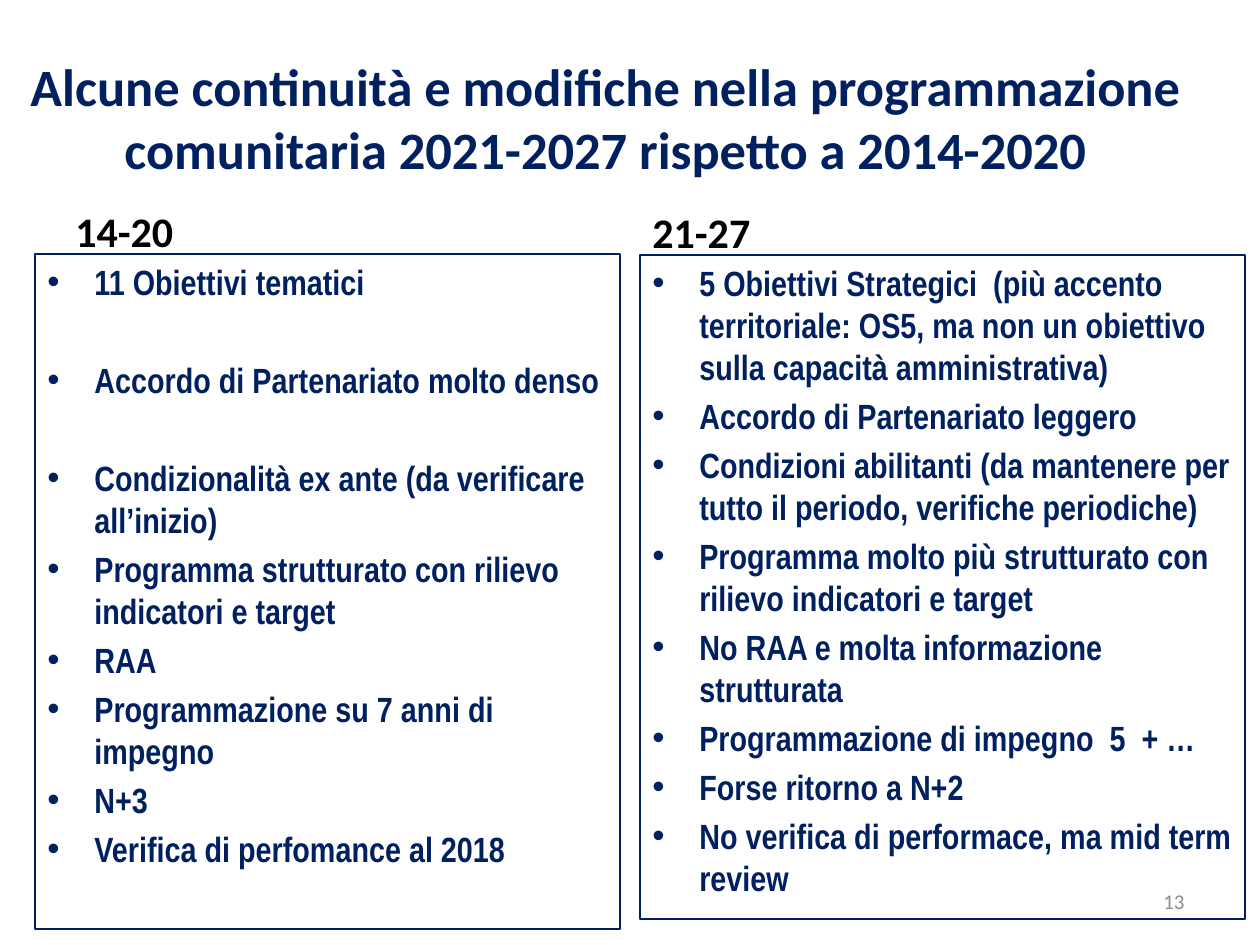
from pptx import Presentation
from pptx.dml.color import RGBColor
from pptx.enum.shapes import MSO_SHAPE
from pptx.enum.text import MSO_ANCHOR, PP_ALIGN
from pptx.oxml.xmlchemy import OxmlElement
from pptx.util import Pt

EMU_PER_PX = 914400 / 126
COLORS = {"navy": "002060", "black": "000000", "gray": "8C8C8C"}
BULLET_INDENT = 47
PARAGRAPH_GAP = 4
WIDE_GAP = 32

TITLE = ("Alcune continuità e modifiche nella programmazione "
         "comunitaria 2021-2027 rispetto a 2014-2020")
PERIOD_14_20 = [
    ("11 Obiettivi tematici", PARAGRAPH_GAP),
    ("Accordo di Partenariato molto denso", WIDE_GAP),
    ("Condizionalità ex ante (da verificare all’inizio)", WIDE_GAP),
    ("Programma strutturato con rilievo indicatori e target", PARAGRAPH_GAP),
    ("RAA", PARAGRAPH_GAP),
    ("Programmazione su 7 anni di impegno", PARAGRAPH_GAP),
    ("N+3", PARAGRAPH_GAP),
    ("Verifica di perfomance al 2018", PARAGRAPH_GAP),
]
PERIOD_21_27 = [(point, PARAGRAPH_GAP) for point in (
    "5 Obiettivi Strategici  (più accento territoriale: OS5, "
    "ma non un obiettivo sulla capacità amministrativa)",
    "Accordo di Partenariato leggero",
    "Condizioni abilitanti (da mantenere per tutto il periodo, verifiche periodiche)",
    "Programma molto più strutturato con rilievo indicatori e target",
    "No RAA e molta informazione strutturata",
    "Programmazione di impegno  5  + …",
    "Forse ritorno a N+2",
    "No verifica di performace, ma mid term review",
)]


def px(length):
    """Turn pixels into EMU."""
    return round(length * EMU_PER_PX)


def color(name):
    """Look up a palette colour."""
    return RGBColor.from_string(COLORS[name])


def write(paragraph, text, *, size, fill, font="Calibri", bold=True,
          align=PP_ALIGN.LEFT, before=0):
    """Put formatted text into a paragraph."""
    paragraph.alignment = align
    paragraph.space_before = Pt(before)
    run = paragraph.add_run()
    run.text = text
    run.font.size = Pt(size)
    run.font.name = font
    run.font.bold = bold
    run.font.color.rgb = color(fill)


def add_label(slide, box, text, anchor, **style):
    """Add a wrapped one-paragraph text box."""
    frame = slide.shapes.add_textbox(*map(px, box)).text_frame
    frame.word_wrap = True
    frame.vertical_anchor = anchor
    write(frame.paragraphs[0], text, **style)


def add_bullet(paragraph):
    """Give a paragraph a hanging round bullet."""
    properties = paragraph._p.get_or_add_pPr()
    properties.set("marL", str(px(BULLET_INDENT)))
    properties.set("indent", str(-px(BULLET_INDENT)))
    typeface = OxmlElement("a:buFont")
    typeface.set("typeface", "Arial")
    bullet = OxmlElement("a:buChar")
    bullet.set("char", "•")
    properties.extend([typeface, bullet])


def add_period(slide, box, period, points, heading_shift=0):
    """Place a period heading over its outlined list of points."""
    left, top, width, height = box
    panel = slide.shapes.add_shape(MSO_SHAPE.RECTANGLE, *map(px, box))
    panel.shadow.inherit = False
    panel.fill.background()
    panel.line.color.rgb = color("navy")
    panel.line.width = Pt(0.75)
    frame = panel.text_frame
    frame.word_wrap = True
    frame.vertical_anchor = MSO_ANCHOR.TOP
    for index, (point, gap) in enumerate(points):
        paragraph = frame.add_paragraph() if index else frame.paragraphs[0]
        write(paragraph, point, size=20, fill="navy", font="Arial Narrow", before=gap)
        add_bullet(paragraph)
    add_label(slide, (left + heading_shift, top - 80, 557, 88), period,
              MSO_ANCHOR.BOTTOM, size=24, fill="black")


def main():
    """Build and save the comparison slide."""
    deck = Presentation()
    deck.slide_width, deck.slide_height = px(1260), px(945)
    slide = deck.slides.add_slide(deck.slide_layouts[6])
    add_label(slide, (15, 38, 1182, 157), TITLE, MSO_ANCHOR.MIDDLE,
              size=30, fill="navy", align=PP_ALIGN.CENTER)
    add_period(slide, (35, 254, 585, 675), "14-20", PERIOD_14_20, heading_shift=28)
    add_period(slide, (640, 255, 605, 664), "21-27", PERIOD_21_27)
    add_label(slide, (903, 876, 294, 50), "13", MSO_ANCHOR.MIDDLE,
              size=12, fill="gray", bold=False, align=PP_ALIGN.RIGHT)
    deck.save("out.pptx")


if __name__ == "__main__":
    main()
